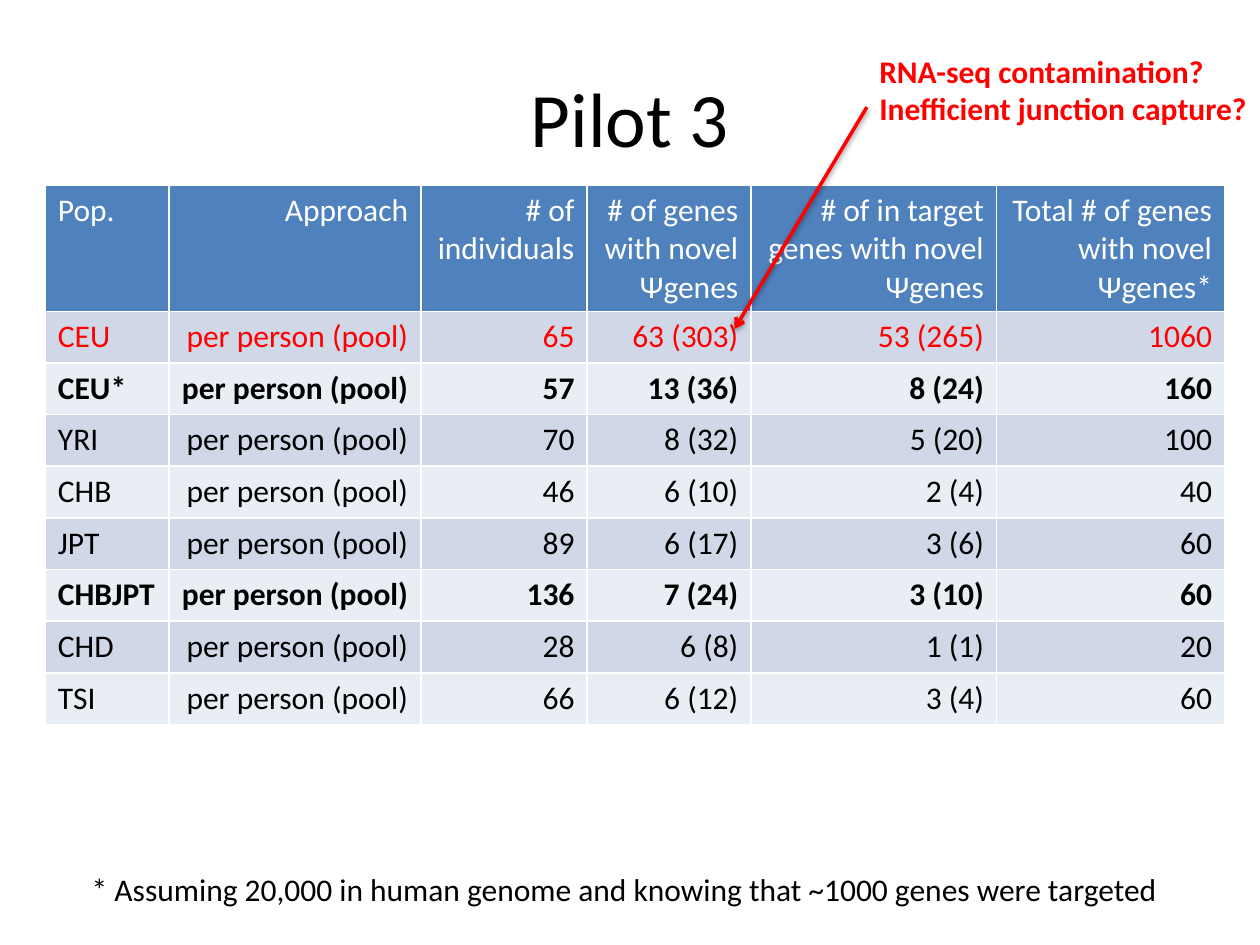
"""Build the Pilot 3 slide on genes with novel Ψgenes per population."""
from lxml.etree import SubElement
from pptx import Presentation
from pptx.dml.color import RGBColor
from pptx.enum.shapes import MSO_CONNECTOR as Connector
from pptx.enum.text import MSO_ANCHOR as Anchor, PP_ALIGN as Align
from pptx.oxml.ns import qn
from pptx.util import Inches, Pt

BLACK = RGBColor(0x00, 0x00, 0x00)
WHITE = RGBColor(0xFF, 0xFF, 0xFF)
RED = RGBColor(0xFF, 0x00, 0x00)
HEADER_BLUE = RGBColor(0x4F, 0x81, 0xBD)
BANDS = (RGBColor(0xD0, 0xD8, 0xE8), RGBColor(0xE9, 0xED, 0xF4))

COLUMN_WIDTHS = (0.98, 2, 1.32, 1.3, 1.95, 1.81)
HEADINGS = (
    "Pop.",
    "Approach",
    "# of\nindividuals",
    "# of genes\nwith novel\nΨgenes",
    "# of in target\ngenes with novel\nΨgenes",
    "Total # of genes\nwith novel\nΨgenes*",
)
APPROACH = "per person (pool)"
POPULATIONS = (
    ("CEU", "65", "63 (303)", "53 (265)", "1060"),
    ("CEU*", "57", "13 (36)", "8 (24)", "160"),
    ("YRI", "70", "8 (32)", "5 (20)", "100"),
    ("CHB", "46", "6 (10)", "2 (4)", "40"),
    ("JPT", "89", "6 (17)", "3 (6)", "60"),
    ("CHBJPT", "136", "7 (24)", "3 (10)", "60"),
    ("CHD", "28", "6 (8)", "1 (1)", "20"),
    ("TSI", "66", "6 (12)", "3 (4)", "60"),
)
ROW_FORMATS = {
    "CEU": {"color": RED},
    "CEU*": {"bold": True},
    "CHBJPT": {"bold": True},
}


def write(frame, text, size=18, color=BLACK, bold=False, align=Align.LEFT, font="Calibri"):
    for index, line in enumerate(text.split("\n")):
        paragraph = frame.add_paragraph() if index else frame.paragraphs[0]
        paragraph.alignment = align
        run = paragraph.add_run()
        run.text = line
        run.font.name = font
        run.font.size = Pt(size)
        run.font.bold = bold
        run.font.color.rgb = color


class SlideBuilder:
    def __init__(self, slide, row_height=0.41, arrow_color=RED, arrow_width=2):
        self.slide = slide
        self.row_height = row_height
        self.arrow_color = arrow_color
        self.arrow_width = arrow_width

    def text(self, text, box, wrap=False, anchor=Anchor.TOP, **style):
        frame = self.slide.shapes.add_textbox(*map(Inches, box)).text_frame
        frame.word_wrap = wrap
        frame.vertical_anchor = anchor
        write(frame, text, **style)

    def table_row(self, cells, texts, fill, **style):
        for column, (cell, text) in enumerate(zip(cells, texts)):
            cell.fill.solid()
            cell.fill.fore_color.rgb = fill
            align = Align.RIGHT if column else Align.LEFT
            write(cell.text_frame, text, align=align, **style)

    def table(self, left, top):
        row_count = len(POPULATIONS) + 1
        size = sum(COLUMN_WIDTHS), row_count * self.row_height
        grid = self.slide.shapes.add_table(
            row_count, len(COLUMN_WIDTHS), *map(Inches, (left, top, *size))
        ).table
        for column, width in zip(grid.columns, COLUMN_WIDTHS):
            column.width = Inches(width)
        header, *body = grid.rows
        self.table_row(header.cells, HEADINGS, HEADER_BLUE, color=WHITE)
        for index, (row, (population, *counts)) in enumerate(zip(body, POPULATIONS)):
            self.table_row(
                row.cells,
                (population, APPROACH, *counts),
                BANDS[index % 2],
                **ROW_FORMATS.get(population, {}),
            )

    def arrow(self, start, end):
        arrow = self.slide.shapes.add_connector(
            Connector.STRAIGHT, *map(Inches, (*start, *end))
        )
        arrow.line.color.rgb = self.arrow_color
        arrow.line.width = Pt(self.arrow_width)
        properties = arrow.line._get_or_add_ln().getparent()
        SubElement(properties.find(qn("a:ln")), qn("a:tailEnd"), type="arrow")
        effects = SubElement(properties, qn("a:effectLst"))
        shadow = SubElement(
            effects, qn("a:outerShdw"),
            blurRad=str(Pt(3.1)), dist=str(Pt(1.6)), dir="5400000", rotWithShape="0",
        )
        shade = SubElement(shadow, qn("a:srgbClr"), val=str(BLACK))
        SubElement(shade, qn("a:alpha"), val="38000")


def main():
    deck = Presentation()
    deck.slide_width, deck.slide_height = Inches(10), Inches(7.5)
    builder = SlideBuilder(deck.slides.add_slide(deck.slide_layouts[6]))
    builder.text(
        "Pilot 3", (0.5, 0.3, 9, 1.25),
        wrap=True, anchor=Anchor.MIDDLE, size=44, align=Align.CENTER,
    )
    builder.table(0.36, 1.47)
    builder.text(
        "* Assuming 20,000 in human genome and knowing that ~1000 genes were targeted",
        (0.63, 6.86, 8.74, 0.4),
    )
    builder.text(
        "RNA-seq contamination?\nInefficient junction capture?",
        (6.88, 0.36, 3.15, 0.71), color=RED, bold=True,
    )
    builder.arrow((6.88, 0.85), (5.83, 2.61))
    deck.save("out.pptx")


if __name__ == "__main__":
    main()
